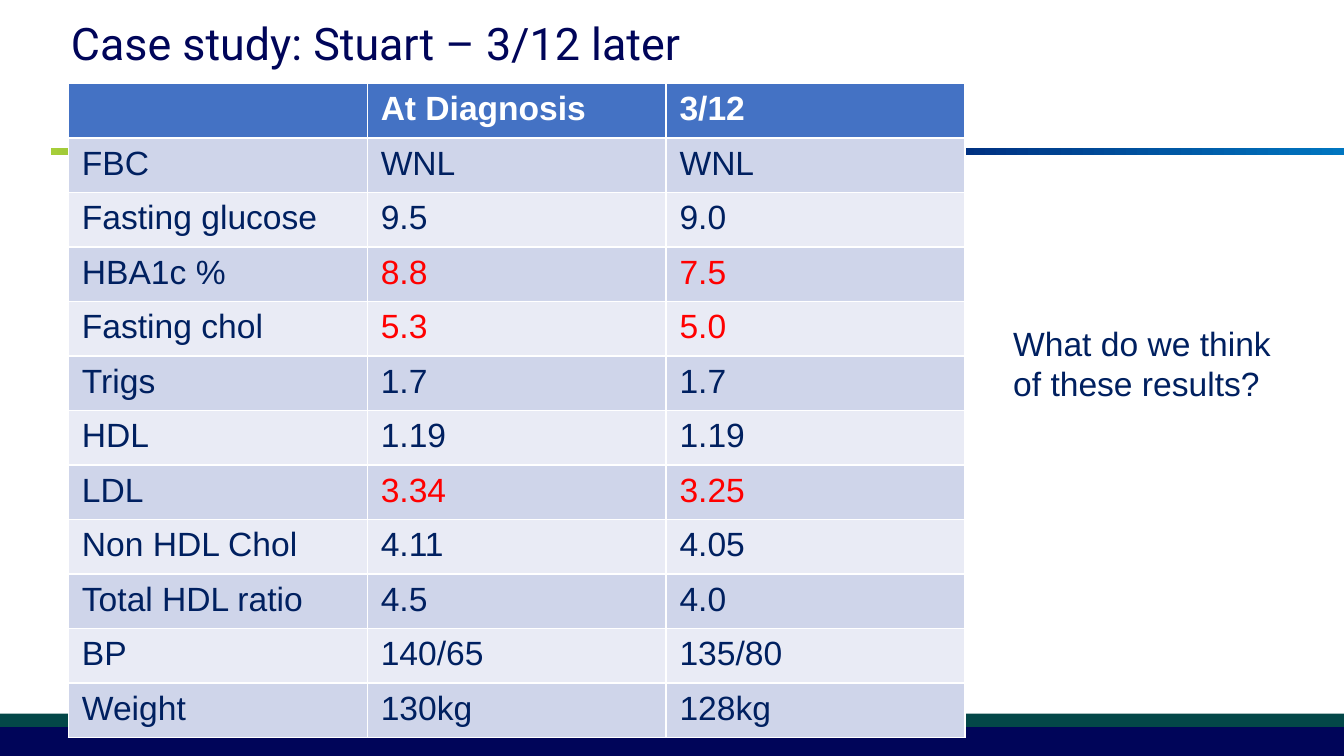
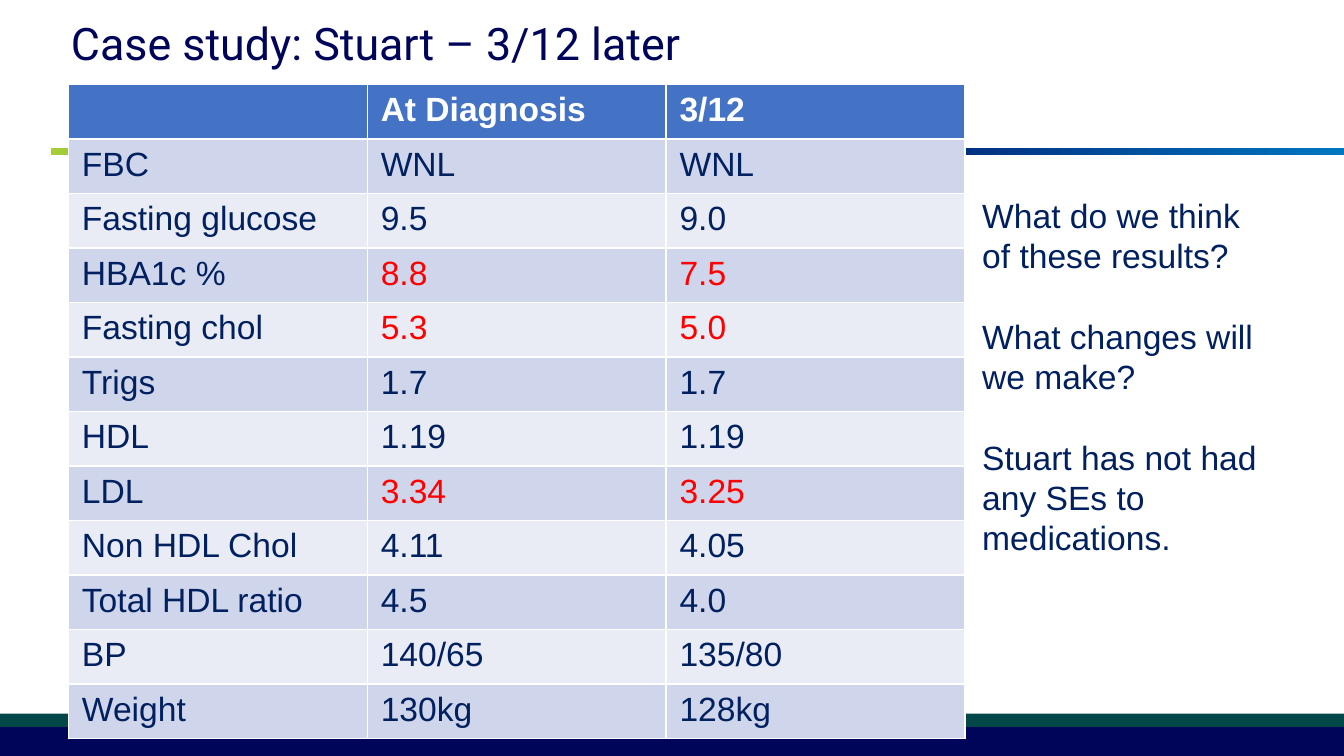
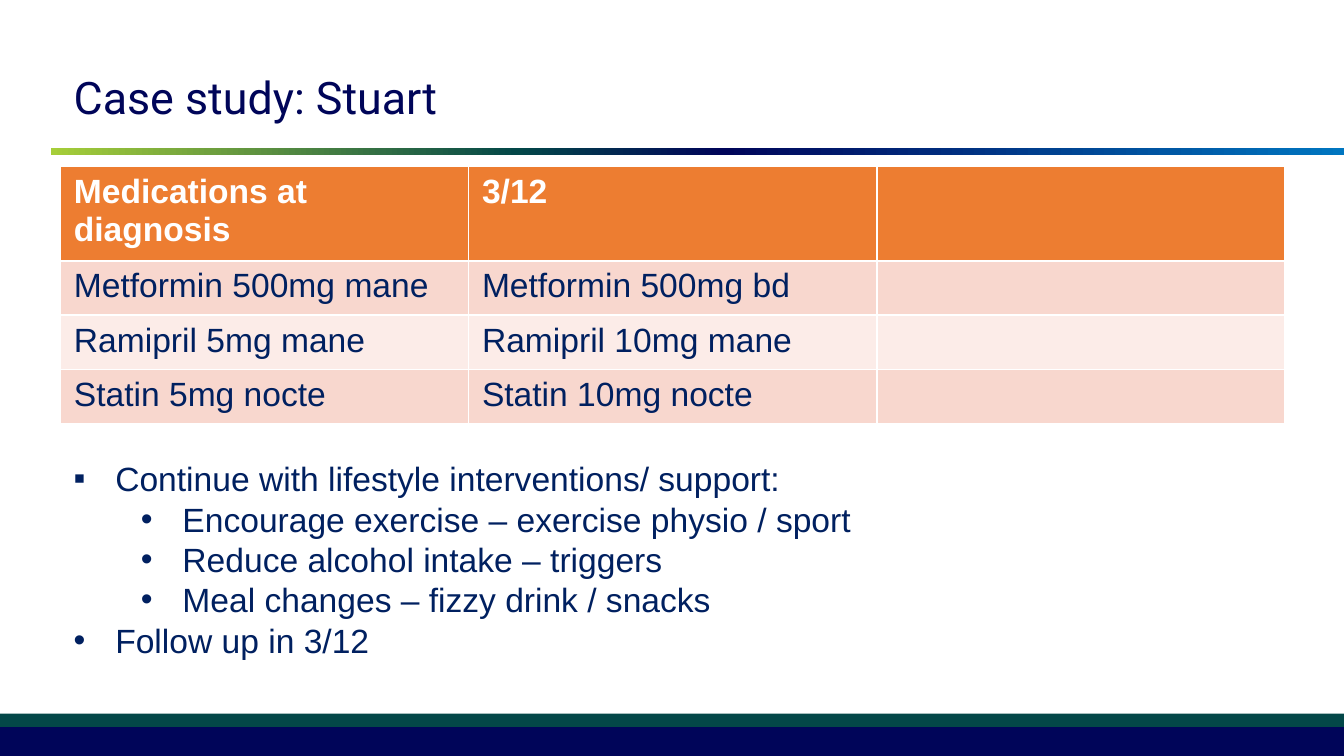
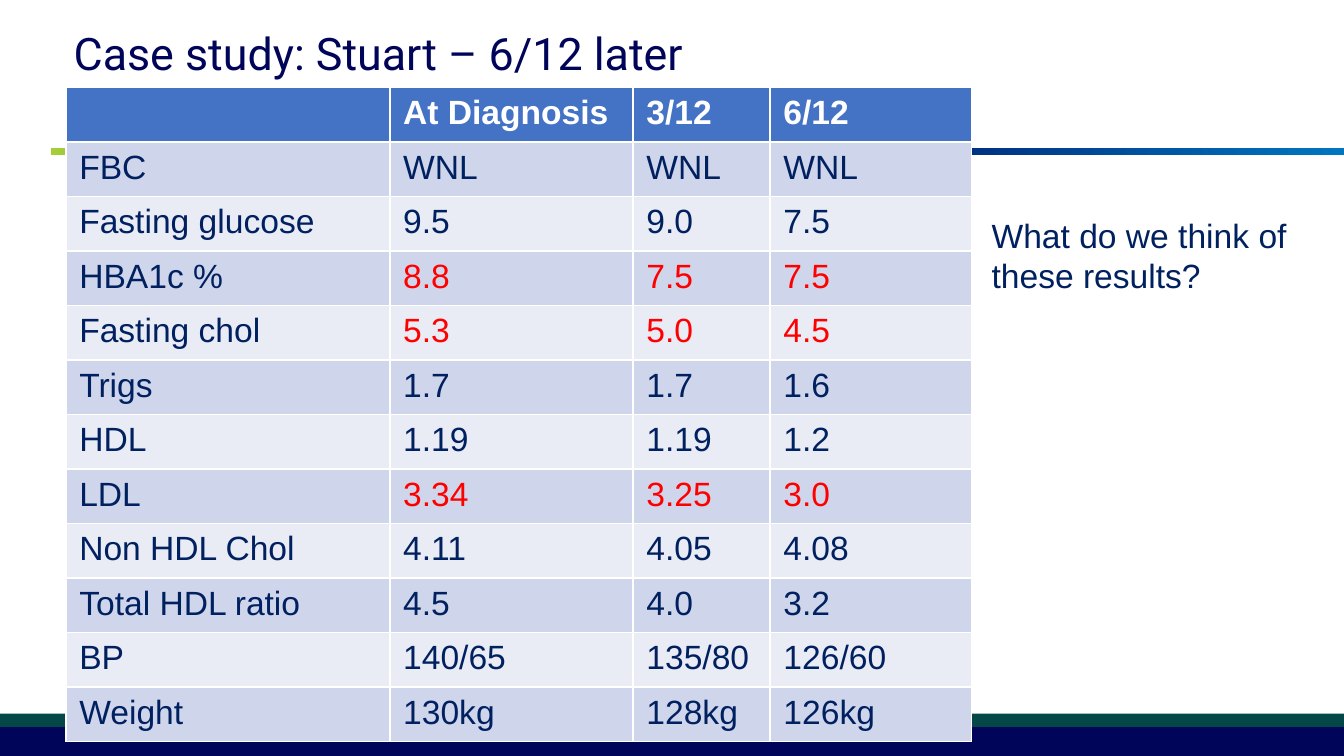
from dataclasses import dataclass

from lxml import etree
from pptx import Presentation
from pptx import util as u
from pptx.dml.color import RGBColor
from pptx.enum import shapes, text
from pptx.oxml import ns


@dataclass(frozen=True)
class Theme:
    """Colours, fonts and type sizes shared by all slides."""

    navy: str = "000559"
    green: str = "034748"
    ink: str = "002060"
    white: str = "FFFFFF"
    alert: str = "FF0000"
    rule_stops: tuple = ((0, "A6CE39"), (36, "034748"), (52, "000559"), (100, "0076C0"))
    blue_table: tuple = ("4472C4", "CFD5EA", "E9EBF5")
    orange_table: tuple = ("ED7D31", "F8D7CE", "FCECE8")
    title_font: str = "Roboto"
    body_font: str = "Arial"
    title_size: float = 24
    body_size: float = 18
    body_leading: float = 21.6


THEME = Theme()
SLIDE_WIDTH = 10
SLIDE_HEIGHT = SLIDE_WIDTH * 9 / 16
ABNORMAL = {"HBA1c %", "Fasting chol", "LDL"}
RESULTS = [
    ["", "At Diagnosis", "3/12", "6/12"],
    ["FBC", "WNL", "WNL", "WNL"],
    ["Fasting glucose", "9.5", "9.0", "7.5"],
    ["HBA1c %", "8.8", "7.5", "7.5"],
    ["Fasting chol", "5.3", "5.0", "4.5"],
    ["Trigs", "1.7", "1.7", "1.6"],
    ["HDL", "1.19", "1.19", "1.2"],
    ["LDL", "3.34", "3.25", "3.0"],
    ["Non HDL Chol", "4.11", "4.05", "4.08"],
    ["Total HDL ratio", "4.5", "4.0", "3.2"],
    ["BP", "140/65", "135/80", "126/60"],
    ["Weight", "130kg", "128kg", "126kg"],
]
MEDICATIONS = [
    ["Medications at diagnosis", "3/12", ""],
    ["Metformin 500mg mane", "Metformin 500mg bd", ""],
    ["Ramipril 5mg mane", "Ramipril 10mg mane", ""],
    ["Statin 5mg nocte", "Statin 10mg nocte", ""],
]
PLAN = [
    (0, "▪", "Continue with lifestyle interventions/ support:"),
    (1, "•", "Encourage exercise – exercise physio / sport"),
    (1, "•", "Reduce alcohol intake – triggers"),
    (1, "•", "Meal changes – fizzy drink / snacks"),
    (0, "•", "Follow up in 3/12"),
]
QUESTION = "What do we think of these results?"


def inches(box):
    """Convert a left, top, width, height box to lengths."""
    return [u.Inches(value) for value in box]


def add_element(parent, tag, **attributes):
    """Append a DrawingML element."""
    return etree.SubElement(parent, ns.qn(f"a:{tag}"), attributes)


def style_font(paragraph, color, name=THEME.body_font, size=THEME.body_size, bold=False):
    """Set the font of a whole paragraph."""
    font = paragraph.font
    font.name, font.size, font.bold = name, u.Pt(size), bold
    font.color.rgb = RGBColor.from_string(color)


def add_band(slide, box, color):
    """Draw a plain band without outline."""
    band = slide.shapes.add_shape(shapes.MSO_SHAPE.RECTANGLE, *inches(box))
    band.shadow.inherit = False
    band.line.fill.background()
    band.fill.solid()
    band.fill.fore_color.rgb = RGBColor.from_string(color)
    return band


def add_frame(slide):
    """Draw the footer bands and the gradient rule under the title."""
    add_band(slide, (0, 5.31, SLIDE_WIDTH, 0.1), THEME.green)
    add_band(slide, (0, 5.41, SLIDE_WIDTH, 0.25), THEME.navy)
    rule = add_band(slide, (0.38, 1.1, SLIDE_WIDTH - 0.38, 0.05), THEME.navy)
    rule.fill.gradient()
    rule.fill.gradient_angle = 0
    stops = rule.element.spPr.find(".//" + ns.qn("a:gsLst"))
    for stop in list(stops):
        stops.remove(stop)
    for position, color in THEME.rule_stops:
        stop = add_element(stops, "gs", pos=str(position * 1000))
        add_element(stop, "srgbClr", val=color)


def add_text_frame(slide, box):
    """Add a wrapping text box and return its text frame."""
    frame = slide.shapes.add_textbox(*inches(box)).text_frame
    frame.word_wrap = True
    return frame


def add_title(slide, left, top, title):
    """Write the slide title, centred vertically in its box."""
    frame = add_text_frame(slide, (left, top, 9.43, 0.7))
    frame.vertical_anchor = text.MSO_ANCHOR.MIDDLE
    paragraph = frame.paragraphs[0]
    paragraph.text = title
    style_font(paragraph, THEME.navy, THEME.title_font, THEME.title_size)


def add_body(slide, box, lines):
    """Write body lines and return their paragraphs."""
    frame = add_text_frame(slide, box)
    paragraphs = []
    for index, line in enumerate(lines):
        paragraph = frame.add_paragraph() if index else frame.paragraphs[0]
        paragraph.text = line
        paragraph.line_spacing = u.Pt(THEME.body_leading)
        style_font(paragraph, THEME.ink)
        paragraphs.append(paragraph)
    return paragraphs


def add_remarks(slide, box, lines):
    """Write remarks separated by one line of space."""
    for paragraph in add_body(slide, box, lines)[1:]:
        paragraph.space_before = u.Pt(THEME.body_leading)


def add_bullets(slide, box, items):
    """Write a two-level bulleted list."""
    paragraphs = add_body(slide, box, [line for _, _, line in items])
    for paragraph, (level, mark, _) in zip(paragraphs, items):
        paragraph.level = level
        properties = paragraph._p.get_or_add_pPr()
        properties.set("marL", str(u.Inches(0.31 + 0.5 * level)))
        properties.set("indent", str(u.Inches(-0.31)))
        font_properties = properties.find(ns.qn("a:defRPr"))
        for bullet in (
            add_element(properties, "buFont", typeface=THEME.body_font),
            add_element(properties, "buChar", char=mark),
        ):
            font_properties.addprevious(bullet)


def add_banded_table(slide, box, rows, palette, widths=None):
    """Fill a box with a table that has a header and banded rows."""
    header_color, *band_colors = palette
    widths = widths or [box[2] / len(rows[0])] * len(rows[0])
    table = slide.shapes.add_table(len(rows), len(widths), *inches(box)).table
    for column, width in zip(table.columns, widths):
        column.width = u.Inches(width)
    for row_index, values in enumerate(rows):
        header = row_index == 0
        table.rows[row_index].height = u.Inches(box[3] / len(rows))
        fill = header_color if header else band_colors[(row_index - 1) % 2]
        for column_index, value in enumerate(values):
            cell = table.cell(row_index, column_index)
            cell.fill.solid()
            cell.fill.fore_color.rgb = RGBColor.from_string(fill)
            cell.text = value
            abnormal = column_index > 0 and values[0] in ABNORMAL
            color = THEME.white if header else THEME.alert if abnormal else THEME.ink
            style_font(cell.text_frame.paragraphs[0], color, bold=header)


def add_slide(presentation):
    """Add a blank slide with the shared frame."""
    slide = presentation.slides.add_slide(presentation.slide_layouts[6])
    add_frame(slide)
    return slide


def add_results_slide(presentation, title, title_at, table_box, columns, remarks_box, remarks, widths=None):
    """Build a slide of test results with remarks at the right."""
    slide = add_slide(presentation)
    rows = [row[:columns] for row in RESULTS]
    add_banded_table(slide, table_box, rows, THEME.blue_table, widths)
    add_remarks(slide, remarks_box, remarks)
    add_title(slide, *title_at, title)


def add_medications_slide(presentation):
    """Build the slide of medications and the follow-up plan."""
    slide = add_slide(presentation)
    add_banded_table(slide, (0.45, 1.24, 9.11, 1.62), MEDICATIONS, THEME.orange_table)
    add_bullets(slide, (0.45, 3.36, 7.47, 1.92), PLAN)
    add_title(slide, 0.45, 0.37, "Case study: Stuart")


def main():
    """Build the four slides and save them."""
    presentation = Presentation()
    presentation.slide_width = u.Inches(SLIDE_WIDTH)
    presentation.slide_height = u.Inches(SLIDE_HEIGHT)
    three_months = "Case study: Stuart – 3/12 later"
    add_results_slide(
        presentation, three_months, (0.43, -0.03), (0.51, 0.62, 6.67, 4.87), 3,
        (7.44, 2.35, 2.28, 0.71), [QUESTION],
    )
    add_results_slide(
        presentation, three_months, (0.43, -0.03), (0.51, 0.63, 6.67, 4.87), 3,
        (7.21, 1.4, 2.28, 3.74),
        [QUESTION, "What changes will we make?", "Stuart has not had any SEs to medications."],
    )
    add_medications_slide(presentation)
    add_results_slide(
        presentation, "Case study: Stuart – 6/12 later", (0.45, 0.04), (0.49, 0.65, 6.74, 4.87), 4,
        (7.28, 1.55, 2.57, 0.71), [QUESTION], [2.41, 1.81, 1.02, 1.5],
    )
    presentation.save("out.pptx")


if __name__ == "__main__":
    main()
